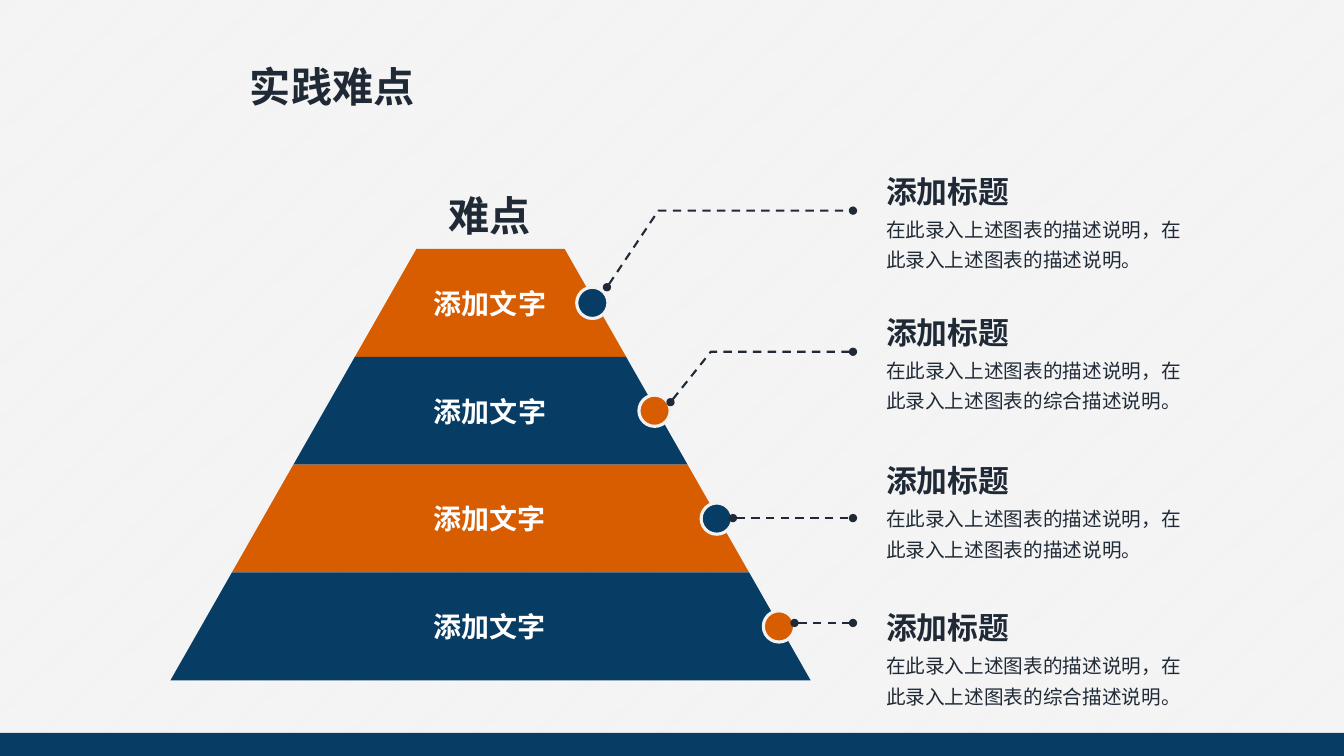
import lxml.etree
import pptx
import pptx.dml.color
import pptx.enum.dml
import pptx.enum.shapes
import pptx.enum.text
import pptx.oxml.ns
import pptx.util

Inches = pptx.util.Inches
Shapes = pptx.enum.shapes.MSO_SHAPE
Align = pptx.enum.text.PP_ALIGN
qn = pptx.oxml.ns.qn

ORANGE, NAVY, INK, PALE, WHITE = "D85C00", "073C65", "202A36", "F2F2F2", "FFFFFF"
CJK = "Noto Sans CJK SC"
color = pptx.dml.color.RGBColor.from_string


def add_text(box, text, size, font_name=CJK, font_color=INK, bold=True,
             align=Align.LEFT, spacing=1.0, wrap=False, margins=(0.1, 0.05)):
    """Put one paragraph in a new text box; box is left, top, width, height in inches."""
    shape = slide.shapes.add_textbox(*map(Inches, box))
    side, edge = map(Inches, margins)
    frame_format = {
        "word_wrap": wrap,
        "auto_size": pptx.enum.text.MSO_AUTO_SIZE.SHAPE_TO_FIT_TEXT,
        "margin_left": side, "margin_right": side,
        "margin_top": edge, "margin_bottom": edge,
    }
    for name, value in frame_format.items():
        setattr(shape.text_frame, name, value)
    paragraph = shape.text_frame.paragraphs[0]
    paragraph.alignment = align
    paragraph.line_spacing = spacing
    run = paragraph.add_run()
    run.text = text
    for name, value in {"size": pptx.util.Pt(size), "bold": bold, "name": font_name}.items():
        setattr(run.font, name, value)
    run.font.color.rgb = color(font_color)
    east_asian = lxml.etree.SubElement(run.font._element, qn("a:ea"))
    east_asian.set("typeface", font_name)


def paint(shape, fill_color, line_color=None):
    shape.shadow.inherit = False
    shape.fill.solid()
    shape.fill.fore_color.rgb = color(fill_color)
    if line_color:
        shape.line.color.rgb = color(line_color)
        shape.line.width = pptx.util.Pt(2.25)
    else:
        shape.line.fill.background()


presentation = pptx.Presentation()
presentation.slide_width = Inches(13.33)
presentation.slide_height = Inches(7.5)
slide = presentation.slides.add_slide(presentation.slide_layouts[6])

background = slide.background.fill
background.patterned()
background.pattern = pptx.enum.dml.MSO_PATTERN.LIGHT_UPWARD_DIAGONAL
background.fore_color.rgb = color(WHITE)
background.back_color.rgb = color(PALE)

# Pyramid: each tier widens by the same step on both sides
TOP, TIER_HEIGHT, TIER_STEP = 2.47, 1.07, 0.61
LEFT_EDGE, RIGHT_EDGE = 4.13, 5.6
CENTER = 4.86
tier_colors = [ORANGE, NAVY, ORANGE, NAVY]
for tier, tier_color in enumerate(tier_colors):
    top = TOP + tier * TIER_HEIGHT
    left, right = LEFT_EDGE - tier * TIER_STEP, RIGHT_EDGE + tier * TIER_STEP
    corners = [(right, top), (right + TIER_STEP, top + TIER_HEIGHT),
               (left - TIER_STEP, top + TIER_HEIGHT)]
    builder = slide.shapes.build_freeform(Inches(left), Inches(top))
    builder.add_line_segments([(Inches(x), Inches(y)) for x, y in corners])
    paint(builder.convert_to_shape(), tier_color)

for tier, label_width in enumerate([2.04, 2.39, 3.13, 3.13]):
    label_top = TOP + 0.34 + tier * TIER_HEIGHT
    add_text((CENTER - label_width / 2, label_top, label_width, 0.4), "添加文字", 20,
             font_color=WHITE, align=Align.CENTER, wrap=True, margins=(0.07, 0.03))

for tier, dot_color in enumerate(reversed(tier_colors)):
    dot = slide.shapes.add_shape(
        Shapes.OVAL, Inches(5.72 + tier * 0.617), Inches(2.85 + tier * TIER_HEIGHT),
        Inches(0.31), Inches(0.31))
    paint(dot, dot_color, PALE)

# Dashed leaders from the pyramid to the descriptions
LEADER_END = 8.46
leaders = [
    [(6.02, 2.85), (6.53, 2.09), (LEADER_END, 2.09)],
    [(6.65, 3.99), (7.05, 3.49), (LEADER_END, 3.49)],
    [(7.27, 5.14), (LEADER_END, 5.14)],
    [(7.88, 6.18), (LEADER_END, 6.18)],
]
for points in leaders:
    start, *rest = [(Inches(x), Inches(y)) for x, y in points]
    bent = len(rest) > 1
    if bent:
        builder = slide.shapes.build_freeform(*start)
        builder.add_line_segments(rest, close=False)
        leader = builder.convert_to_shape()
        leader.fill.background()
    else:
        leader = slide.shapes.add_connector(
            pptx.enum.shapes.MSO_CONNECTOR.STRAIGHT, *start, *rest[0])
    leader.line.color.rgb = color(INK)
    leader.line.width = pptx.util.Pt(1.5)
    leader.line.dash_style = pptx.enum.dml.MSO_LINE.DASH
    properties = leader._element.spPr
    for end in ("a:headEnd", "a:tailEnd"):
        lxml.etree.SubElement(properties.find(qn("a:ln")), qn(end)).set("type", "oval")
    if bent:
        leader.shadow.inherit = False
    else:
        lxml.etree.SubElement(properties, qn("a:effectLst"))

descriptions = [
    (1.66, "在此录入上述图表的描述说明，在此录入上述图表的描述说明。"),
    (3.06, "在此录入上述图表的描述说明，在此录入上述图表的综合描述说明。"),
    (4.53, "在此录入上述图表的描述说明，在此录入上述图表的描述说明。"),
    (5.99, "在此录入上述图表的描述说明，在此录入上述图表的综合描述说明。"),
]
for top, description in descriptions:
    add_text((8.69, top, 1.44, 0.47), "添加标题", 22)
    add_text((8.69, top + 0.38, 3.26, 0.68), description, 14,
             bold=False, spacing=1.3, wrap=True)

add_text((2.38, 0.56, 1.85, 0.59), "实践难点", 29.4, font_name="Arial")
add_text((4.35, 1.84, 1.03, 0.59), "难点", 29.4, font_name="Arial")

footer = slide.shapes.add_shape(
    Shapes.RECTANGLE, 0, Inches(7.27), presentation.slide_width, Inches(0.23))
paint(footer, NAVY)

presentation.save("out.pptx")
